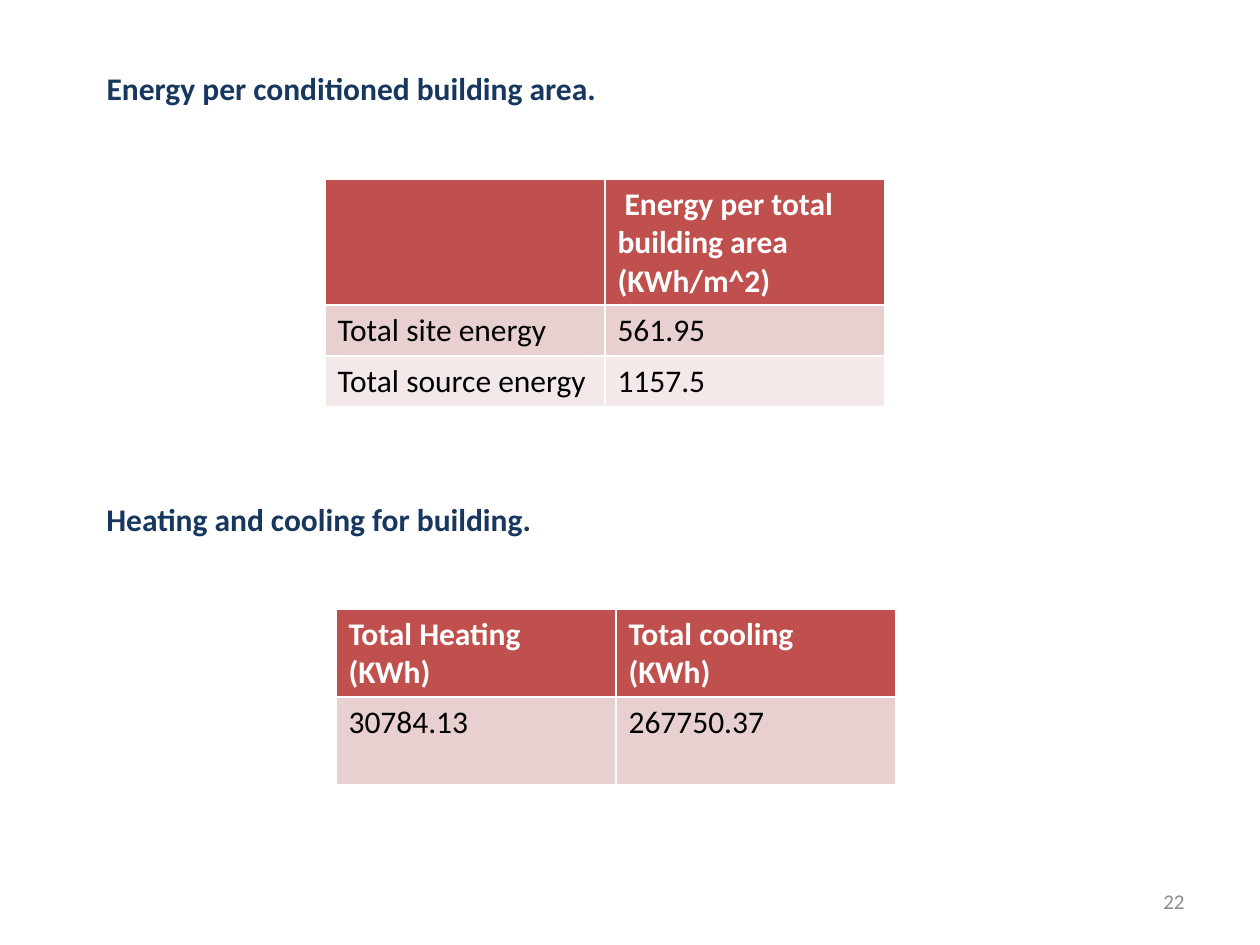
"""Build the building energy slide with two headings and two tables."""
import pptx
import pptx.dml.color
import pptx.enum.text
import pptx.util

PX = 914400 // 126
NAVY = pptx.dml.color.RGBColor(0x17, 0x37, 0x5E)
GREY = pptx.dml.color.RGBColor(0x8C, 0x8C, 0x8C)
RED = pptx.dml.color.RGBColor(0xC0, 0x50, 0x4D)
PINK = pptx.dml.color.RGBColor(0xE8, 0xD0, 0xD0)
PALE = pptx.dml.color.RGBColor(0xF4, 0xE9, 0xE9)
WHITE = pptx.dml.color.RGBColor(0xFF, 0xFF, 0xFF)
BLACK = pptx.dml.color.RGBColor(0x00, 0x00, 0x00)
ROW_FILLS = [RED, PINK, PALE]
COLUMN_WIDTH = 280


def style(para, size, color, bold=False):
    para.font.name = "Calibri"
    para.font.size = pptx.util.Pt(size)
    para.font.color.rgb = color
    para.font.bold = bold


def place(box, left, top, width, height):
    box.left, box.top = left * PX, top * PX
    box.width, box.height = width * PX, height * PX


deck = pptx.Presentation()
deck.slide_width = pptx.util.Inches(10)
deck.slide_height = pptx.util.Inches(7.5)
page = deck.slides.add_slide(deck.slide_layouts[5])

headings = [
    (page.shapes.title, "Energy per conditioned building area.", 63, 518),
    (page.shapes.add_textbox(0, 0, 0, 0), "Heating and cooling for building.", 494, 454),
]
for box, text, top, width in headings:
    place(box, 94, top, width, 50)
    frame = box.text_frame
    frame.text = text
    frame.word_wrap = False
    frame.auto_size = pptx.enum.text.MSO_AUTO_SIZE.SHAPE_TO_FIT_TEXT
    frame.vertical_anchor = pptx.enum.text.MSO_ANCHOR.TOP
    frame.paragraphs[0].alignment = pptx.enum.text.PP_ALIGN.LEFT
    style(frame.paragraphs[0], 18, NAVY, True)

tables = [
    (325, 179, [125, 51, 51], [
        ["", " Energy per total building area (KWh/m^2)"],
        ["Total site energy", "561.95"],
        ["Total source energy", "1157.5"],
    ]),
    (336, 609, [88, 88], [
        ["Total Heating (KWh)", "Total cooling\n(KWh)"],
        ["30784.13", "267750.37"],
    ]),
]
for left, top, heights, rows in tables:
    table = page.shapes.add_table(
        len(rows), 2, left * PX, top * PX, 2 * COLUMN_WIDTH * PX, sum(heights) * PX
    ).table
    for column in table.columns:
        column.width = COLUMN_WIDTH * PX
    for row_index, texts in enumerate(rows):
        table.rows[row_index].height = heights[row_index] * PX
        is_header = row_index == 0
        for column_index, text in enumerate(texts):
            cell = table.cell(row_index, column_index)
            cell.fill.solid()
            cell.fill.fore_color.rgb = ROW_FILLS[row_index]
            cell.text = text
            for para in cell.text_frame.paragraphs:
                style(para, 18, WHITE if is_header else BLACK, is_header)

number = page.shapes.add_textbox(0, 0, 0, 0)
place(number, 903, 876, 294, 50)
number.text_frame.text = "22"
number.text_frame.word_wrap = True
number.text_frame.vertical_anchor = pptx.enum.text.MSO_ANCHOR.MIDDLE
number.text_frame.paragraphs[0].alignment = pptx.enum.text.PP_ALIGN.RIGHT
style(number.text_frame.paragraphs[0], 12, GREY)

deck.save("out.pptx")
